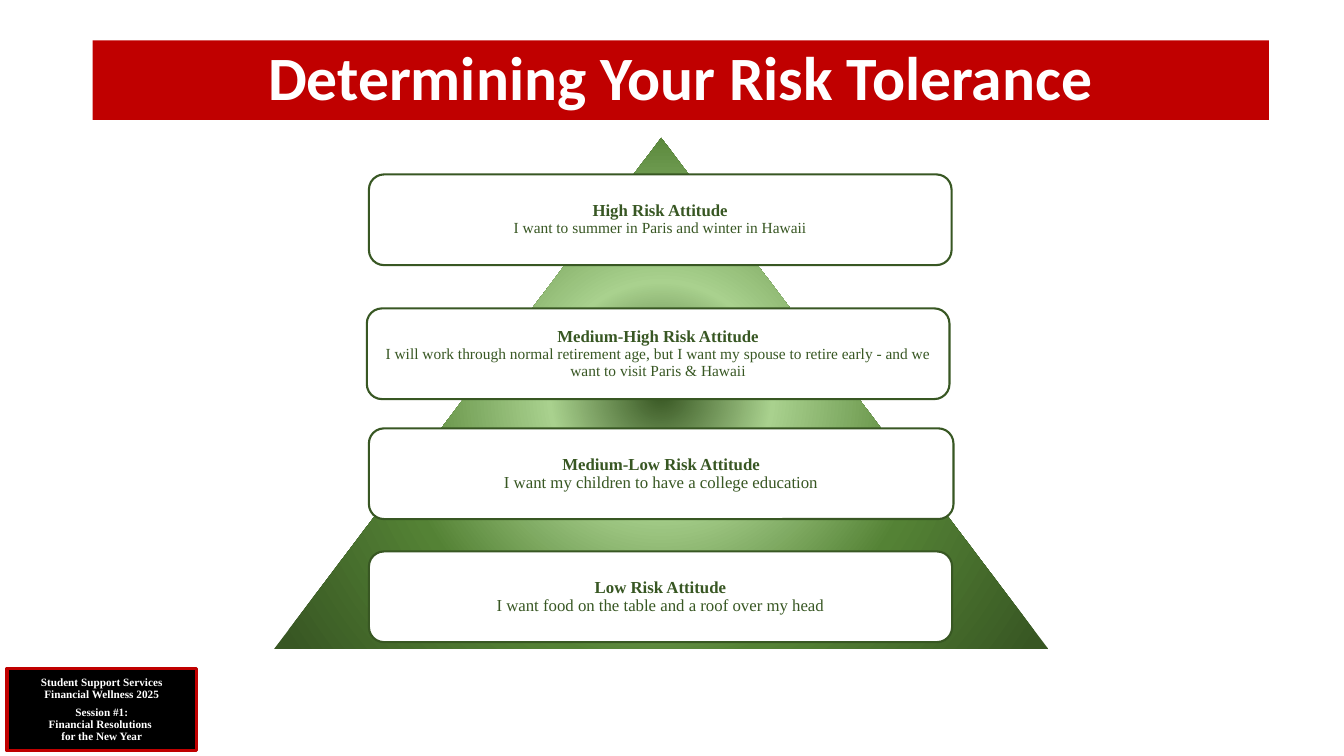
from lxml.etree import SubElement
from pptx import Presentation
from pptx.dml.color import RGBColor
from pptx.enum.shapes import MSO_SHAPE
from pptx.enum.text import MSO_ANCHOR, PP_ALIGN
from pptx.oxml.ns import qn
from pptx.util import Pt

GREEN, RED, WHITE, BLACK = "385723", "C00000", "FFFFFF", "000000"
SERIF = "Times New Roman"
STOPS = [(0, GREEN), (24, "A9D18E"), (58, "548235"), (97, GREEN)]
CARDS = [
    (263.5, 124.6, 416.2, "High Risk Attitude",
     "I want to summer in Paris and winter in Hawaii", 11),
    (262, 220.3, 416.2, "Medium-High Risk Attitude",
     "I will work through normal retirement age, but I want my spouse "
     "to retire early - and we want to visit Paris & Hawaii", 11),
    (263.5, 306, 417.6, "Medium-Low Risk Attitude",
     "I want my children to have a college education", 12),
    (263.5, 393.9, 416.6, "Low Risk Attitude",
     "I want food on the table and a roof over my head", 12),
]


def color(code):
    return RGBColor.from_string(code)


def add_box(slide, kind, box, fill, line=None, width=1.5):
    shape = slide.shapes.add_shape(kind, *map(Pt, box))
    shape.shadow.inherit = False
    shape.fill.solid()
    shape.fill.fore_color.rgb = color(fill)
    if line:
        shape.line.color.rgb = color(line)
        shape.line.width = Pt(width)
    else:
        shape.line.fill.background()
    frame = shape.text_frame
    frame.word_wrap = True
    frame.vertical_anchor = MSO_ANCHOR.MIDDLE
    return shape


def add_para(frame, lines, font, tint, first=True, before=0):
    para = frame.paragraphs[0] if first else frame.add_paragraph()
    para.alignment = PP_ALIGN.CENTER
    para.line_spacing = 0.9
    if before:
        para.space_before = Pt(before)
    for index, (text, size, bold) in enumerate(lines):
        if index:
            para.add_line_break()
        run = para.add_run()
        run.text = text
        run.font.name = font
        run.font.size = Pt(size)
        run.font.bold = bold
        run.font.color.rgb = color(tint)


def add_title(slide, box):
    shape = add_box(slide, MSO_SHAPE.RECTANGLE, box, RED)
    add_para(shape.text_frame, [("Determining Your Risk Tolerance", 44, True)],
             "Calibri", WHITE)


def add_footer(slide, box):
    frame = add_box(slide, MSO_SHAPE.RECTANGLE, box, BLACK, RED, 2.25).text_frame
    groups = [
        ["Student Support Services", "Financial Wellness 2025"],
        ["Session #1:", "Financial Resolutions ", "for the New Year"],
    ]
    for index, group in enumerate(groups):
        add_para(frame, [(text, 8, True) for text in group], SERIF, WHITE,
                 first=index == 0, before=4 * index)


def add_glow(shape):
    shape.fill.gradient()
    grad = shape.fill._xPr.find(qn("a:gradFill"))
    for child in list(grad):
        grad.remove(child)
    stops = SubElement(grad, qn("a:gsLst"))
    for place, code in STOPS:
        stop = SubElement(stops, qn("a:gs"), pos=str(place * 1000))
        SubElement(stop, qn("a:srgbClr"), val=code)
    route = SubElement(grad, qn("a:path"), path="circle")
    SubElement(route, qn("a:fillToRect"), l="50000", t="50000", r="50000", b="50000")


def add_card(slide, box, head, body, size):
    shape = add_box(slide, MSO_SHAPE.ROUNDED_RECTANGLE, box, WHITE, GREEN)
    frame = shape.text_frame
    frame.margin_left = frame.margin_right = Pt(3.6)
    add_para(frame, [(head, 12, True), (body, size, False)], SERIF, GREEN)


def add_pyramid(slide, box):
    left, top = box[:2]
    add_glow(add_box(slide, MSO_SHAPE.ISOSCELES_TRIANGLE, box, GREEN))
    for x, y, width, head, body, size in CARDS:
        add_card(slide, (left + x - 195.8, top + y - 98.6, width, 64.8),
                 head, body, size)


def main():
    deck = Presentation()
    deck.slide_width, deck.slide_height = Pt(960), Pt(540)
    slide = deck.slides.add_slide(deck.slide_layouts[6])
    add_footer(slide, (5, 477.4, 135.4, 59))
    add_title(slide, (66.2, 28.8, 840.2, 56.9))
    add_pyramid(slide, (195.8, 98.6, 553, 365))
    deck.save("out.pptx")


if __name__ == "__main__":
    main()
